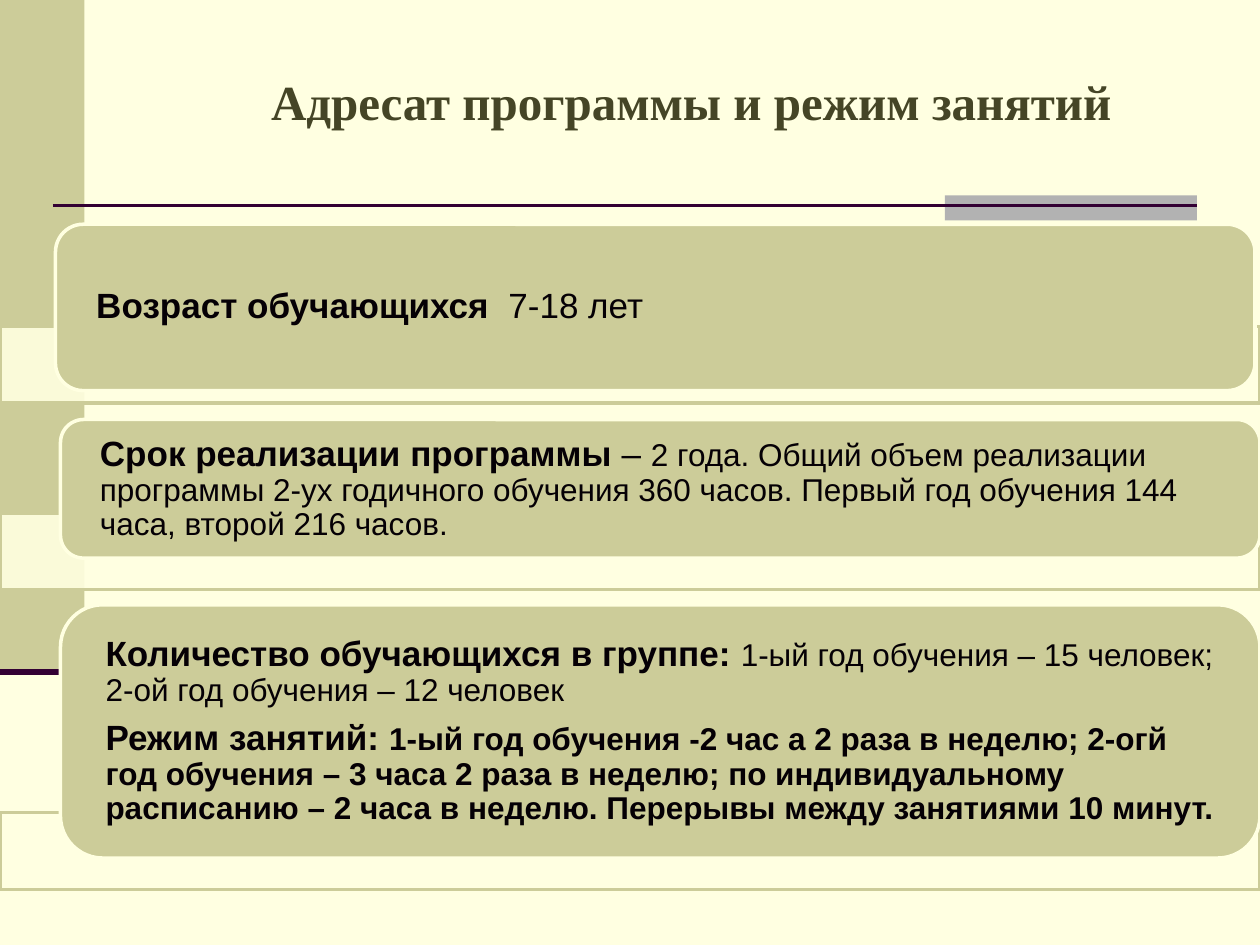
"""Build the slide on the programme's audience and class schedule."""
import pptx
import pptx.dml.color
import pptx.enum.shapes
import pptx.enum.text
import pptx.oxml.ns
import pptx.util
from lxml import etree

PX = 9144
OLIVE, CREAM, PLUM, GREY = "CCCC99", "FFFFE1", "330033", "B2B2B2"
RECT = pptx.enum.shapes.MSO_SHAPE.RECTANGLE
ROUNDED = pptx.enum.shapes.MSO_SHAPE.ROUNDED_RECTANGLE
MIDDLE = pptx.enum.text.MSO_ANCHOR.MIDDLE

TITLE = "Адресат программы и режим занятий"
TITLE_FONT = {"name": "Times New Roman", "size": pptx.util.Pt(28), "bold": True}
BARS = [((0, 0, 67, 533), OLIVE), ((750, 155, 200, 20), GREY)]
RULES = [((42, 163, 950, 163), 1.5), ((0, 533, 67, 533), 3.5)]
CARDS = [
    {"panel_top": 259, "box": (44, 178, 952, 132), "paragraphs": [
        [("Возраст обучающихся ", 20, True), (" 7-18 лет", 20, False)]]},
    {"panel_top": 407, "box": (48, 333, 952, 110), "paragraphs": [
        [("Срок реализации программы ", 20, True), ("– ", 20, False),
         ("2 года. Общий объем реализации программы 2-ух годичного обучения "
          "360 часов. Первый год обучения 144 часа, второй 216 часов.", 18, False)]]},
    {"panel_top": 645, "box": (48, 480, 952, 201), "paragraphs": [
        [("Количество обучающихся в группе: ", 20, True),
         ("1-ый год обучения – 15 человек; 2-ой год обучения – 12 человек", 18, False)],
        [("Режим занятий: ", 20, True),
         ("1-ый год обучения -2 час а 2 раза в неделю; 2-огй год обучения – "
          "3 часа 2 раза в неделю; по индивидуальному расписанию – 2 часа в неделю. "
          "Перерывы между занятиями 10 минут.", 18, True)]]},
]
PANEL_HEIGHT = 61
CARD_PAD = 0.0488
CARD_FRAME = {"word_wrap": True, "vertical_anchor": MIDDLE,
              "margin_left": 26 * PX, "margin_right": 26 * PX,
              "margin_top": 0, "margin_bottom": 0}
CARD_PARAGRAPH = {"line_spacing": 0.9, "space_after": pptx.util.Pt(7)}


def emu(lengths):
    return [round(length * PX) for length in lengths]


def rgb(value):
    return pptx.dml.color.RGBColor.from_string(value)


def apply(target, formats):
    for attribute, value in formats.items():
        setattr(target, attribute, value)


def add_block(slide, kind, box, fill, outline=None, alpha=None):
    block = slide.shapes.add_shape(kind, *emu(box))
    block.shadow.inherit = False
    block.fill.solid()
    block.fill.fore_color.rgb = rgb(fill)
    if alpha:
        color = block.fill._xPr.find(".//" + pptx.oxml.ns.qn("a:srgbClr"))
        etree.SubElement(color, pptx.oxml.ns.qn("a:alpha"), val=str(alpha * 1000))
    if outline:
        block.line.color.rgb = rgb(outline)
        block.line.width = pptx.util.Pt(2)
    else:
        block.line.fill.background()


def add_rule(slide, ends, width):
    straight = pptx.enum.shapes.MSO_CONNECTOR.STRAIGHT
    rule = slide.shapes.add_connector(straight, *emu(ends))
    rule.line.color.rgb = rgb(PLUM)
    rule.line.width = pptx.util.Pt(width)
    etree.SubElement(rule._element.spPr, pptx.oxml.ns.qn("a:effectLst"))


def add_run(paragraph, text, color, formats):
    run = paragraph.add_run()
    run.text = text
    run.font.color.rgb = rgb(color)
    apply(run.font, formats)


def add_card(slide, card):
    add_block(slide, RECT, (0, card["panel_top"], 1000, PANEL_HEIGHT), CREAM, OLIVE, 90)
    add_block(slide, ROUNDED, card["box"], OLIVE, CREAM)
    left, top, width, height = card["box"]
    pad = height * CARD_PAD
    text_box = (left + pad, top + pad, width - 2 * pad, height - 2 * pad)
    frame = slide.shapes.add_textbox(*emu(text_box)).text_frame
    apply(frame, CARD_FRAME)
    for index, runs in enumerate(card["paragraphs"]):
        paragraph = frame.add_paragraph() if index else frame.paragraphs[0]
        apply(paragraph, CARD_PARAGRAPH)
        for text, size, bold in runs:
            add_run(paragraph, text, "050005",
                    {"name": "Arial", "size": pptx.util.Pt(size), "bold": bold})


def add_title(slide):
    frame = slide.shapes.add_textbox(*emu((154, 52, 740, 57))).text_frame
    apply(frame, {"word_wrap": True,
                  "auto_size": pptx.enum.text.MSO_AUTO_SIZE.SHAPE_TO_FIT_TEXT})
    paragraph = frame.paragraphs[0]
    paragraph.alignment = pptx.enum.text.PP_ALIGN.CENTER
    paragraph._p.get_or_add_pPr().set("indent", str(49 * PX))
    add_run(paragraph, TITLE, "454526", TITLE_FONT)


def main():
    deck = pptx.Presentation()
    deck.slide_width, deck.slide_height = emu((1000, 750))
    slide = deck.slides.add_slide(deck.slide_layouts[6])
    slide.background.fill.solid()
    slide.background.fill.fore_color.rgb = rgb(CREAM)
    for box, fill in BARS:
        add_block(slide, RECT, box, fill)
    for ends, width in RULES:
        add_rule(slide, ends, width)
    for card in CARDS:
        add_card(slide, card)
    add_title(slide)
    deck.save("out.pptx")


if __name__ == "__main__":
    main()
